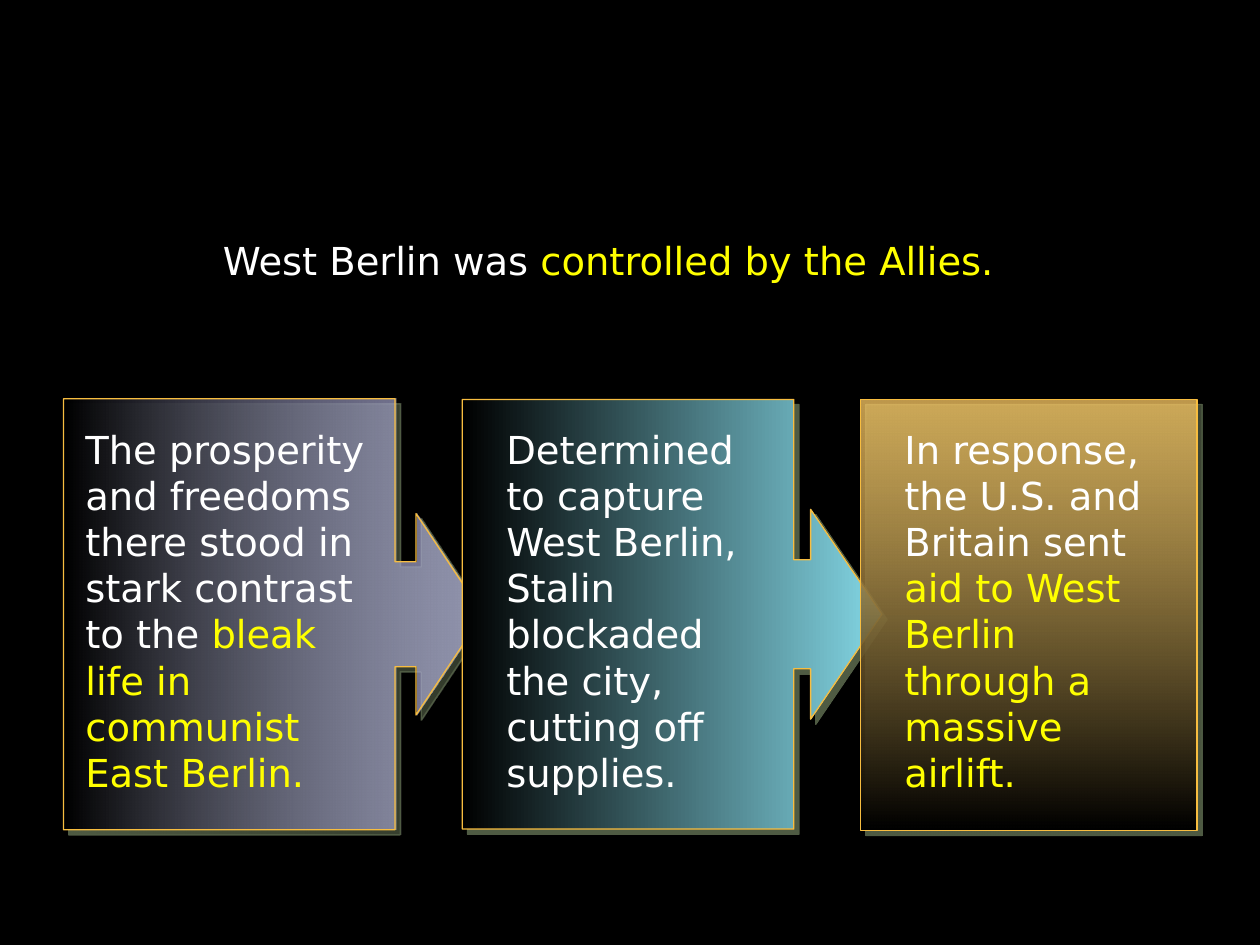
"""Build the slide on West Berlin and the airlift: a heading and three linked steps."""
from lxml import etree
from pptx import Presentation
from pptx.dml.color import RGBColor
from pptx.enum.shapes import MSO_SHAPE
from pptx.enum.text import MSO_AUTO_SIZE
from pptx.oxml import parse_xml
from pptx.oxml.ns import nsdecls, qn
from pptx.util import Pt

PX = 9144
CALLOUT = MSO_SHAPE.UP_ARROW_CALLOUT
RECT = MSO_SHAPE.RECTANGLE
FIT = MSO_AUTO_SIZE.SHAPE_TO_FIT_TEXT
BLACK = RGBColor(0, 0, 0)
WHITE = RGBColor(255, 255, 255)
YELLOW = RGBColor(255, 255, 0)
GOLD = RGBColor(0xF7, 0xBD, 0x40)
LILAC = RGBColor(0xCD, 0xCD, 0xFF)
AQUA = RGBColor(0x83, 0xD7, 0xE5)
AMBER = RGBColor(0xFF, 0xCC, 0x66)
SHADOW = (
    f'<a:outerShdw {nsdecls("a")} blurRad="0" dist="53340" dir="2700000" '
    'algn="ctr" rotWithShape="0"><a:srgbClr val="ADC793">'
    '<a:alpha val="46000"/></a:srgbClr></a:outerShdw>'
)


def add_panel(s, kind, box, color, alpha, adj):
    sp = s.shapes.add_shape(kind, *[v * PX for v in box])
    for i, value in enumerate(adj):
        sp.adjustments[i] = value
    sp.fill.gradient()
    sp.fill.gradient_angle = 270
    first, last = sp.fill.gradient_stops
    first.color.rgb = color
    last.color.rgb = BLACK
    clr = next(sp._element.spPr.iter(qn("a:srgbClr")))
    etree.SubElement(clr, qn("a:alpha")).set("val", str(alpha * 1000))
    sp.line.color.rgb = GOLD
    sp.line.width = Pt(0.75)
    sp.shadow.inherit = False
    sp._element.spPr.find(qn("a:effectLst")).append(parse_xml(SHADOW))
    return sp


def add_text(s, box, plain, accent):
    tf = s.shapes.add_textbox(*[v * PX for v in box]).text_frame
    tf.word_wrap = True
    tf.auto_size = FIT
    p = tf.paragraphs[0]
    p.font.size = Pt(22)
    p.font.name = "DejaVu Sans"
    for text, color in ((plain, WHITE), (accent, YELLOW)):
        if text:
            r = p.add_run()
            r.text = text
            r.font.color.rgb = color


prs = Presentation()
prs.slide_width = 1000 * PX
prs.slide_height = 750 * PX
s = prs.slides.add_slide(prs.slide_layouts[6])
s.background.fill.solid()
s.background.fill.fore_color.rgb = BLACK

add_text(s, (167, 183, 708, 47), "West Berlin was ", "controlled by the Allies.")

for box, color, alpha, adj in (
    ((46, 321, 342, 333), LILAC, 62, (0.25, 0.24, 0.16, 0.79)),
    ((363, 321, 341, 333), AQUA, 100, (0.26, 0.25, 0.17, 0.79)),
):
    sp = add_panel(s, CALLOUT, box, color, alpha, adj)
    sp.rotation = 90
    sp._element.spPr.find(qn("a:xfrm")).set("flipH", "1")
add_panel(s, RECT, (683, 317, 267, 342), AMBER, 75, ())

for x, w, h, plain, accent in (
    (58, 250, 343, "The prosperity and freedoms there stood in stark contrast to the ",
     "bleak life in communist East Berlin."),
    (392, 225, 340, "Determined to capture West Berlin, Stalin blockaded the city, "
     "cutting off supplies.", ""),
    (708, 225, 343, "In response, the U.S. and Britain sent ",
     "aid to West Berlin through a massive airlift."),
):
    add_text(s, (x, 333, w, h), plain, accent)

prs.save("out.pptx")
